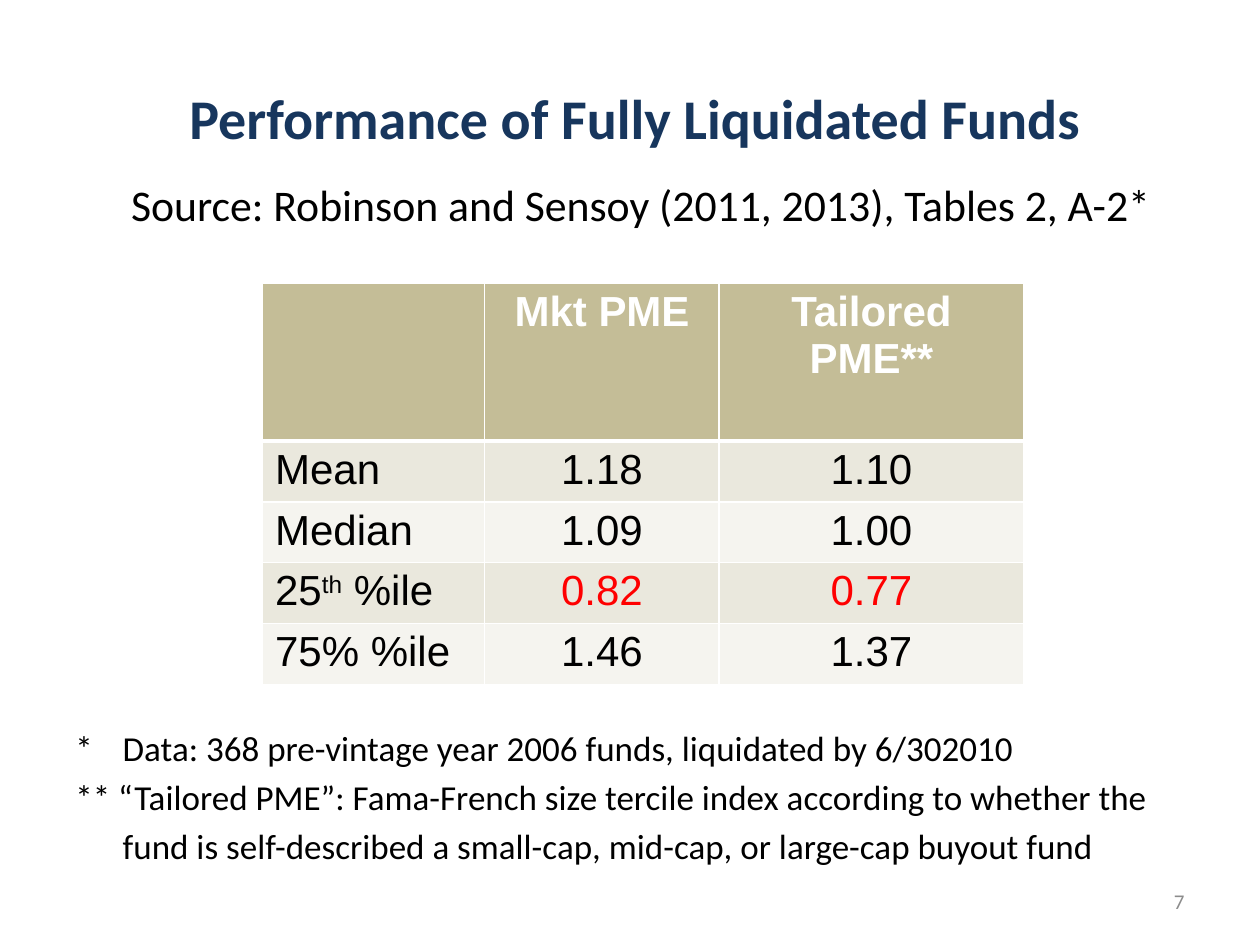
from dataclasses import dataclass
from lxml.etree import SubElement
from pptx import Presentation
from pptx.dml.color import RGBColor as RGB
from pptx.enum.text import MSO_ANCHOR as Anchor, PP_ALIGN as Align
from pptx.oxml.ns import qn
from pptx.util import Pt


@dataclass(frozen=True)
class Theme:
    """Colours, fonts and type sizes of the slide."""
    navy: str = "17365D"
    ink: str = "000000"
    white: str = "FFFFFF"
    red: str = "FF0000"
    gray: str = "8C8C8C"
    head: str = "C4BD97"
    bands: tuple = ("EAE8DD", "F5F4EF")
    sans: str = "Calibri"
    grid: str = "Arial"
    title: int = 32
    source: int = 25
    cell: int = 24
    note: int = 20
    page: int = 12


T = Theme()
ROWS = [
    ("", "Mkt PME", "Tailored PME**"),
    ("Mean", "1.18", "1.10"),
    ("Median", "1.09", "1.00"),
    ("25^th^ %ile", "0.82", "0.77"),
    ("75% %ile", "1.46", "1.37"),
]
NOTES = [
    "*\tData: 368 pre-vintage year 2006 funds, liquidated by 6/302010",
    "** “Tailored PME”: Fama-French size tercile index according to whether "
    "the fund is self-described a small-cap, mid-cap, or large-cap buyout fund",
]


def write(para, text, size, color=T.ink, font=T.sans, bold=False,
          align=Align.LEFT, pitch=None, hang=0):
    """Fill a paragraph; parts between carets are set as superscript."""
    para.alignment = align
    if pitch:
        para.line_spacing = Pt(pitch)
    if hang:
        props = para._p.get_or_add_pPr()
        props.set("marL", str(Pt(hang)))
        props.set("indent", str(-Pt(hang)))
    for i, part in enumerate(text.split("^")):
        run = para.add_run()
        run.text = part
        face = run.font
        face.name, face.size, face.bold = font, Pt(size), bold
        face.color.rgb = RGB.from_string(color)
        if i % 2:
            run._r.get_or_add_rPr().set("baseline", "30000")


def add_box(slide, box, texts, anchor=Anchor.TOP, **style):
    """Add a wrapping text box with one paragraph for each text."""
    frame = slide.shapes.add_textbox(*map(Pt, box)).text_frame
    frame.word_wrap = True
    frame.vertical_anchor = anchor
    for i, text in enumerate(texts):
        para = frame.add_paragraph() if i else frame.paragraphs[0]
        write(para, text, **style)


def add_title(slide, box, text):
    """Place and format the title placeholder."""
    shape = slide.shapes.title
    shape.left, shape.top, shape.width, shape.height = map(Pt, box)
    frame = shape.text_frame
    frame.word_wrap = True
    frame.vertical_anchor = Anchor.MIDDLE
    write(frame.paragraphs[0], text, T.title, T.navy, bold=True,
          align=Align.CENTER)


def paint(cell, fill, base):
    """Give a cell its white borders and its fill."""
    props = cell._tc.get_or_add_tcPr()
    for side, width in (("L", 1), ("R", 1), ("T", 1), ("B", base)):
        line = SubElement(props, qn(f"a:ln{side}"), w=str(Pt(width)))
        solid = SubElement(line, qn("a:solidFill"))
        SubElement(solid, qn("a:srgbClr"), val=T.white)
    cell.fill.solid()
    cell.fill.fore_color.rgb = RGB.from_string(fill)


def add_grid(slide, box, rows, shares, top):
    """Add the table with a tall head row and equal banded rows."""
    left, y, width, height = box
    table = slide.shapes.add_table(
        len(rows), len(shares), *map(Pt, box)).table
    for col, share in zip(table.columns, shares):
        col.width = Pt(width * share / sum(shares))
    for r, row in enumerate(rows):
        head = r == 0
        table.rows[r].height = Pt(
            top if head else (height - top) / (len(rows) - 1))
        for c, text in enumerate(row):
            cell = table.cell(r, c)
            cell.margin_top = cell.margin_bottom = Pt(3)
            paint(cell, T.head if head else T.bands[(r - 1) % 2],
                  3 if head else 1)
            low = c and not head and float(text) < 1
            color = T.white if head else T.red if low else T.ink
            write(cell.text_frame.paragraphs[0], text, T.cell, color,
                  T.grid, bold=head,
                  align=Align.CENTER if c else Align.LEFT)


def main():
    """Build the slide and save it."""
    deck = Presentation()
    deck.slide_width, deck.slide_height = Pt(720), Pt(540)
    slide = deck.slides.add_slide(deck.slide_layouts[5])
    add_title(slide, (39, 22, 648, 90),
              "Performance of Fully Liquidated Funds")
    add_box(slide, (36, 98, 660, 38),
            ["Source: Robinson and Sensoy (2011, 2013), Tables 2, A-2*"],
            size=T.source, align=Align.CENTER)
    add_grid(slide, (150, 162, 435, 226), ROWS, (127, 134, 174), 90)
    add_box(slide, (36, 407.5, 660, 92), NOTES,
            size=T.note, pitch=28, hang=27)
    add_box(slide, (516, 500.5, 168, 28.75), ["7"], Anchor.MIDDLE,
            size=T.page, color=T.gray, align=Align.RIGHT)
    deck.save("out.pptx")


if __name__ == "__main__":
    main()
